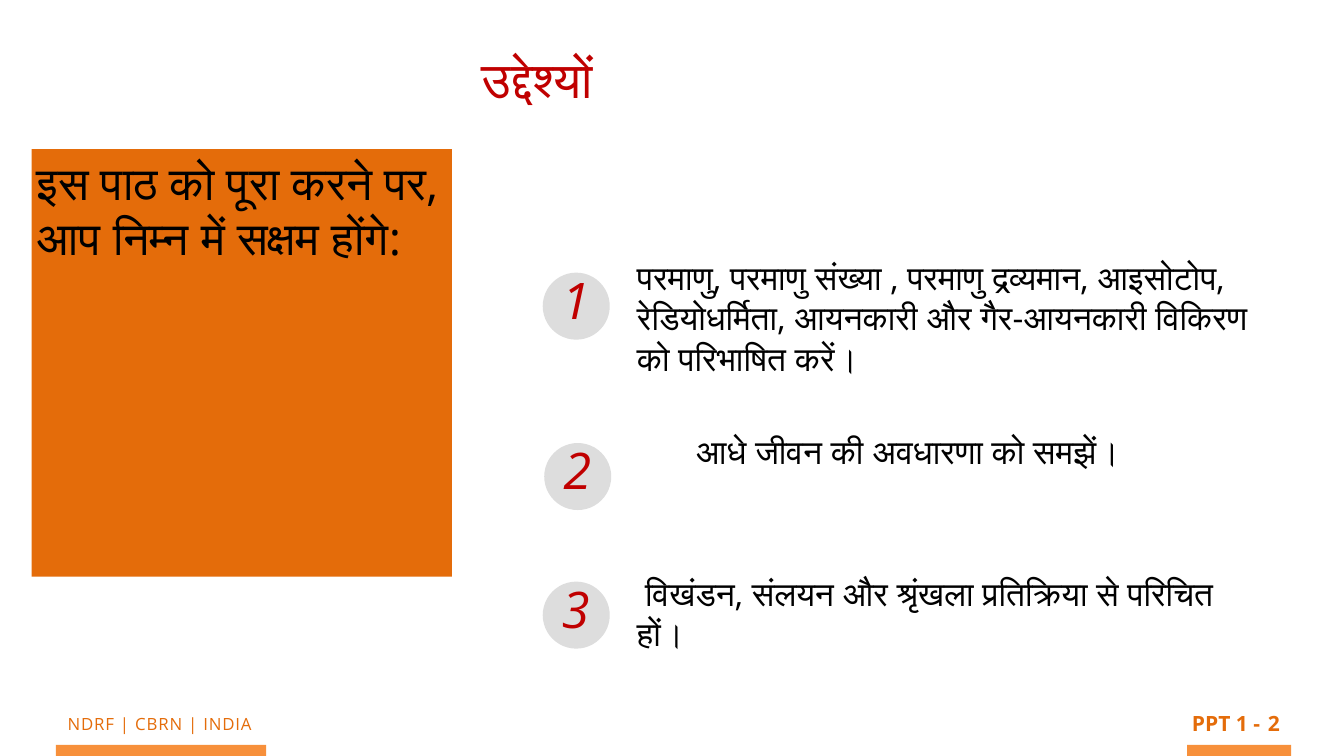
"""Build the lesson objectives slide with three numbered goals."""
import pptx
import pptx.dml.color
import pptx.enum.shapes
import pptx.enum.text
import pptx.oxml.ns
import pptx.util
from lxml import etree

Inches, Pt = pptx.util.Inches, pptx.util.Pt
RGBColor = pptx.dml.color.RGBColor
ALIGN = pptx.enum.text.PP_ALIGN
SHAPE = pptx.enum.shapes.MSO_SHAPE

FONT = "Open Sans"
BLACK = RGBColor(0x00, 0x00, 0x00)
RED = RGBColor(0xC0, 0x00, 0x00)
ORANGE = RGBColor(0xE4, 0x6C, 0x0A)
LIGHT_ORANGE = RGBColor(0xF7, 0x90, 0x3B)
GRAY = RGBColor(0xDD, 0xDD, 0xDD)

TITLE = "उद्देश्यों"
INTRO = "इस पाठ को पूरा करने पर, आप निम्न में सक्षम होंगे:"
# text, space before (pt), left margin (in), first-line indent (in)
GOALS = [
    ("परमाणु, परमाणु संख्या , परमाणु द्रव्यमान, आइसोटोप, रेडियोधर्मिता, "
     "आयनकारी और गैर-आयनकारी विकिरण को परिभाषित करें।", 0, 0, 0),
    ("आधे जीवन की अवधारणा को समझें।", 76, 1.17, 0),
    ("विखंडन, संलयन और श्रृंखला प्रतिक्रिया से परिचित हों।", 145, 0, 0.16),
]
BADGES = [(10.77, 5.41), (10.8, 8.79), (10.77, 11.54)]
BADGE_SIZE = 1.33
FOOTER_BARS = [(1.11, 4.17), (23.56, 2.06)]
FOOTER_TEXTS = [
    ("NDRF | CBRN | INDIA", (0.63, 14.08, 5.08, 0.58), 24, False, True),
    ("PPT 1 -", (23.56, 14.01, 1.54, 0.68), 30, True, False),
    ("2", (25.07, 14.01, 0.42, 0.74), 30, True, True),
]


def place(shape, box):
    shape.left, shape.top, shape.width, shape.height = map(Inches, box)


def set_frame(shape, margin=0.09, wrap=True):
    frame = shape.text_frame
    frame.auto_size = pptx.enum.text.MSO_AUTO_SIZE.NONE
    frame.word_wrap = wrap
    frame.vertical_anchor = pptx.enum.text.MSO_ANCHOR.TOP
    frame.margin_left = frame.margin_right = Inches(margin)
    frame.margin_top = frame.margin_bottom = Inches(margin)
    return frame


def format_paragraph(paragraph, size, color, align=ALIGN.LEFT, bold=False, italic=False):
    paragraph.alignment = align
    for run in paragraph.runs:
        font = run.font
        font.name, font.size, font.bold, font.italic = FONT, Pt(size), bold, italic
        font.color.rgb = color
        complex_font = etree.SubElement(run._r.get_or_add_rPr(), pptx.oxml.ns.qn("a:cs"))
        complex_font.set("typeface", FONT)


def add_filled(shapes, kind, box, color):
    shape = shapes.add_shape(kind, *map(Inches, box))
    shape.shadow.inherit = False
    shape.fill.solid()
    shape.fill.fore_color.rgb = color
    shape.line.fill.background()
    return shape


def add_text(shapes, text, box, size, color, wrap=True, **style):
    frame = set_frame(shapes.add_textbox(*map(Inches, box)), wrap=wrap)
    frame.text = text
    format_paragraph(frame.paragraphs[0], size, color, **style)
    return frame


def add_footer(shapes):
    for left, width in FOOTER_BARS:
        add_filled(shapes, SHAPE.RECTANGLE, (left, 14.78, width, 0.22), LIGHT_ORANGE)
    for text, box, size, bold, wrap in FOOTER_TEXTS:
        frame = add_text(shapes, text, box, size, ORANGE, wrap, align=ALIGN.CENTER, bold=bold)
        if not bold:
            frame.paragraphs[0].runs[0]._r.get_or_add_rPr().set("spc", "120")


def fill_goals(body):
    place(body, (12.55, 5.01, 12.54, 8.14))
    frame = set_frame(body)
    frame.text = "\n".join(goal[0] for goal in GOALS)
    for paragraph, (_, before, margin, indent) in zip(frame.paragraphs, GOALS):
        properties = paragraph._p.get_or_add_pPr()
        properties.set("marL", str(Inches(margin)))
        properties.set("indent", str(Inches(indent)))
        etree.SubElement(properties, pptx.oxml.ns.qn("a:buNone"))
        paragraph.space_before = Pt(before)
        format_paragraph(paragraph, 48, BLACK)


def add_badges(shapes):
    for number, (left, top) in enumerate(BADGES, 1):
        group = shapes.add_group_shape()
        add_filled(group.shapes, SHAPE.OVAL, (left, top, BADGE_SIZE, BADGE_SIZE), GRAY)
        add_text(group.shapes, str(number), (left + 0.29, top - 0.16, 0.9, 1.84),
                 72, RED, italic=True)


def main():
    presentation = pptx.Presentation()
    presentation.slide_width, presentation.slide_height = Inches(26.67), Inches(15)
    slide = presentation.slides.add_slide(presentation.slide_layouts[1])

    title = slide.shapes.title
    place(title, (9.47, 0.86, 3.33, 1.38))
    title_frame = set_frame(title, wrap=False)
    title_frame.text = TITLE
    format_paragraph(title_frame.paragraphs[0], 72, RED)

    fill_goals(slide.placeholders[1])
    add_footer(slide.shapes)

    panel = add_filled(slide.shapes, SHAPE.RECTANGLE, (0.63, 2.96, 8.34, 8.48), ORANGE)
    panel_frame = set_frame(panel, 0.1)
    panel_frame.text = INTRO
    format_paragraph(panel_frame.paragraphs[0], 66, BLACK)

    add_badges(slide.shapes)
    presentation.save("out.pptx")


if __name__ == "__main__":
    main()
